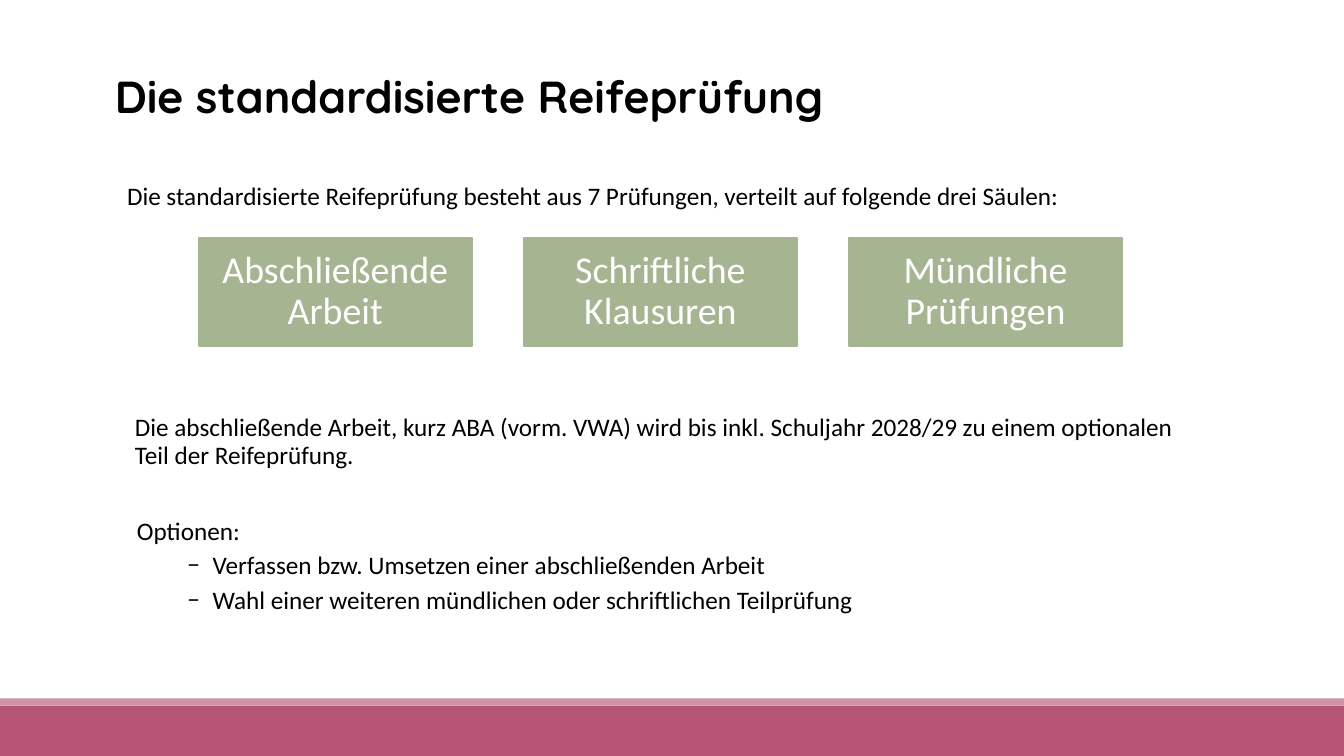
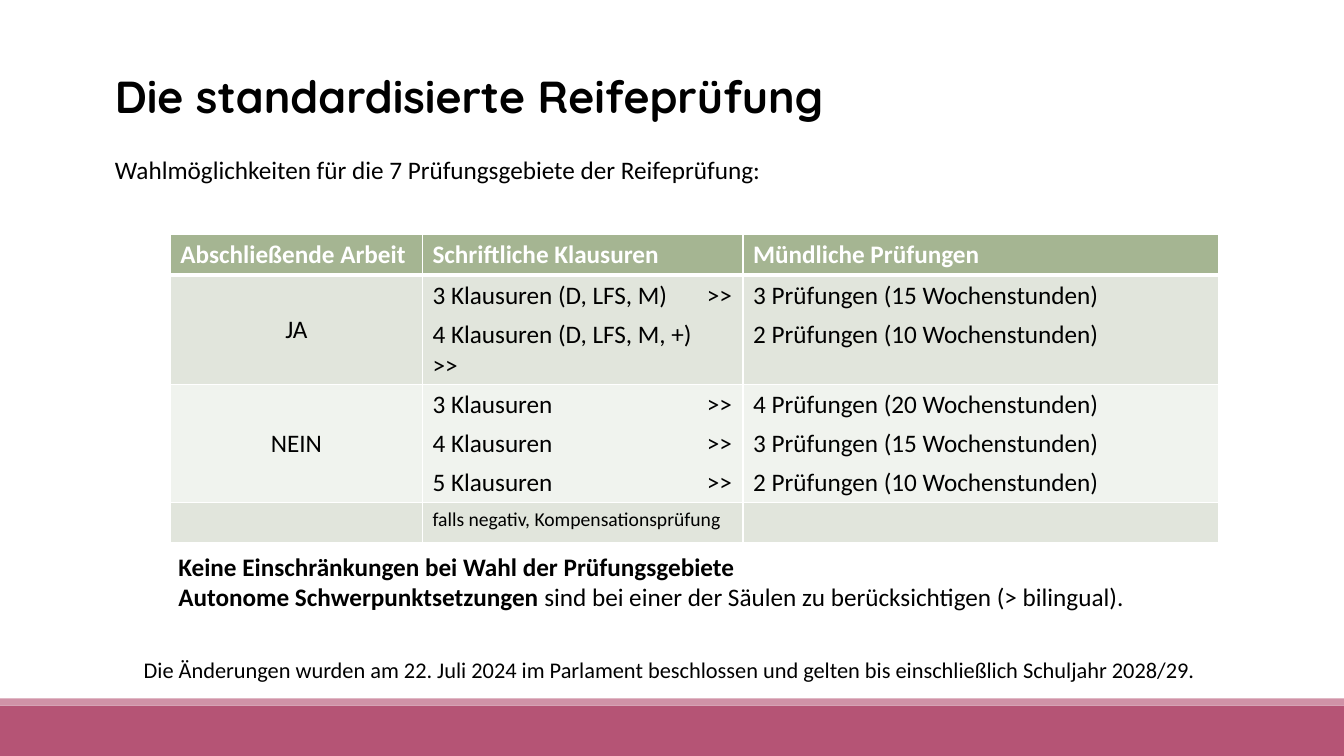
"""Build two slides on the standardised school-leaving examination."""
from lxml import etree
from pptx import Presentation
from pptx.dml.color import RGBColor
from pptx.enum import shapes, text
from pptx.oxml import ns
from pptx.util import Inches, Pt

BLACK = RGBColor(0x00, 0x00, 0x00)
WHITE = RGBColor(0xFF, 0xFF, 0xFF)
GREEN = RGBColor(0xA5, 0xB5, 0x92)
GREEN_TINT = RGBColor(0xE1, 0xE5, 0xDC)
GREEN_PALE = RGBColor(0xF0, 0xF3, 0xEE)
BERRY = RGBColor(0xB5, 0x54, 0x75)
ROSE = RGBColor(0xD0, 0x92, 0xA7)
BODY_FONT = "Calibri"
TITLE_FONT = "Quicksand"
TITLE = "Die standardisierte Reifeprüfung"
PILLARS = ("Abschließende Arbeit", "Schriftliche Klausuren", "Mündliche Prüfungen")
CENTER = text.PP_ALIGN.CENTER
MIDDLE = text.MSO_ANCHOR.MIDDLE


def format_runs(p, size=18, color=BLACK, bold=False, font=BODY_FONT):
    for r in p.runs:
        r.font.name = font
        r.font.size = Pt(size)
        r.font.bold = bold
        r.font.color.rgb = color


def add_text(s, left, top, width, height, content, spacing=None, align=None, **style):
    tf = s.shapes.add_textbox(Inches(left), Inches(top), Inches(width),
                              Inches(height)).text_frame
    tf.word_wrap = True
    tf.text = content
    for p in tf.paragraphs:
        p.line_spacing = spacing
        p.alignment = align
        format_runs(p, **style)
    return tf


def add_rect(s, left, top, width, height, color):
    sp = s.shapes.add_shape(shapes.MSO_SHAPE.RECTANGLE, Inches(left), Inches(top),
                            Inches(width), Inches(height))
    sp.shadow.inherit = False
    sp.fill.solid()
    sp.fill.fore_color.rgb = color
    sp.line.fill.background()
    return sp


def add_slide(prs):
    s = prs.slides.add_slide(prs.slide_layouts[6])
    add_rect(s, 0, 7, 13.33, 0.5, BERRY)
    add_rect(s, 0, 6.93, 13.33, 0.07, ROSE)
    add_text(s, 1.04, 0.69, 11.5, 0.67, TITLE, spacing=0.9,
             size=32, bold=True, font=TITLE_FONT)
    return s


def add_pillars(s, first=1.97, last=8.42):
    pitch = (last - first) / (len(PILLARS) - 1)
    for i, label in enumerate(PILLARS):
        sp = add_rect(s, first + i * pitch, 2.36, 2.71, 1.07, GREEN)
        sp.line.color.rgb = GREEN
        sp.line.width = Pt(1.25)
        tf = sp.text_frame
        tf.word_wrap = True
        tf.vertical_anchor = MIDDLE
        tf.margin_left = tf.margin_right = Inches(0.21)
        tf.margin_top = tf.margin_bottom = Inches(0.12)
        tf.text = label
        p = tf.paragraphs[0]
        p.alignment = CENTER
        p.line_spacing = 0.9
        format_runs(p, size=27, color=WHITE)


def make_bullet(p, char="−"):
    pPr = p._p.get_or_add_pPr()
    pPr.set("marL", str(Inches(0.75)))
    pPr.set("indent", str(Inches(-0.25)))
    etree.SubElement(pPr, ns.qn("a:buFont")).set("typeface", BODY_FONT)
    etree.SubElement(pPr, ns.qn("a:buChar")).set("char", char)


def add_right_tab(p, pos):
    tabs = etree.SubElement(p._p.get_or_add_pPr(), ns.qn("a:tabLst"))
    tab = etree.SubElement(tabs, ns.qn("a:tab"))
    tab.set("pos", str(Inches(pos)))
    tab.set("algn", "r")


def set_borders(cell, bottom):
    tcPr = cell._tc.get_or_add_tcPr()
    for i, (side, width) in enumerate((("L", 1), ("R", 1), ("T", 1), ("B", bottom))):
        ln = etree.Element(ns.qn(f"a:ln{side}"), w=str(Pt(width)))
        fill = etree.SubElement(ln, ns.qn("a:solidFill"))
        etree.SubElement(fill, ns.qn("a:srgbClr")).set("val", str(WHITE))
        tcPr.insert(i, ln)


def fill_cell(cell, content, fill, border=1, align=None, middle=False,
              space_after=6, **style):
    cell.fill.solid()
    cell.fill.fore_color.rgb = fill
    set_borders(cell, border)
    if middle:
        cell.vertical_anchor = MIDDLE
    cell.text = content
    for p in cell.text_frame.paragraphs:
        p.space_after = Pt(space_after)
        p.alignment = align
        if "\t" in p.text:
            add_right_tab(p, 2.97)
        format_runs(p, **style)


def add_grid(s, left, top, widths, heights):
    table = s.shapes.add_table(len(heights), len(widths), Inches(left), Inches(top),
                               Inches(sum(widths)), Inches(sum(heights))).table
    for column, width in zip(table.columns, widths):
        column.width = Inches(width)
    for row, height in zip(table.rows, heights):
        row.height = Inches(height)
    return table


def add_intro(s, left, top, content):
    table = add_grid(s, left, top, (10.78,), (0.4,))
    table.first_row = table.horz_banding = False
    fill_cell(table.cell(0, 0), content, WHITE, middle=True, space_after=0)


def add_options_table(s, rows):
    table = add_grid(s, 1.69, 2.33, (2.5, 3.18, 4.72), (0.4, 1.08, 1.17, 0.4))
    for j, label in enumerate(PILLARS):
        fill_cell(table.cell(0, j), label, GREEN, border=3, space_after=0,
                  color=WHITE, bold=True)
    for i, (size, *row) in enumerate(rows, 1):
        for j, content in enumerate(row):
            fill_cell(table.cell(i, j), content, GREEN_TINT if i % 2 else GREEN_PALE,
                      align=None if j else CENTER, middle=j == 0, size=size)


def build_pillars_slide(prs):
    s = add_slide(prs)
    add_intro(s, 1.16, 1.75, "Die standardisierte Reifeprüfung besteht aus 7 Prüfungen, "
              "verteilt auf folgende drei Säulen:")
    add_pillars(s)
    add_text(s, 1.24, 4.07, 10.7, 0.64,
             "Die abschließende Arbeit, kurz ABA (vorm. VWA) wird bis inkl. Schuljahr "
             "2028/29 zu einem optionalen Teil der Reifeprüfung.", spacing=0.9)
    tf = add_text(s, 1.26, 5.1, 11.05, 1.06,
                  "Optionen:\nVerfassen bzw. Umsetzen einer abschließenden Arbeit\n"
                  "Wahl einer weiteren mündlichen oder schriftlichen Teilprüfung",
                  spacing=0.9)
    for p in tf.paragraphs[1:]:
        p.level = 1
        p.space_before = Pt(5)
        make_bullet(p)


def build_options_slide(prs):
    s = add_slide(prs)
    two, three, four = (f"{n} Prüfungen ({5 * n} Wochenstunden)" for n in (2, 3, 4))
    add_options_table(s, (
        (18, "JA", "3 Klausuren (D, LFS, M)\t>>\n4 Klausuren (D, LFS, M, +)\v>>",
         f"{three}\n{two}"),
        (18, "NEIN", "\n".join(f"{n} Klausuren\t>>" for n in (3, 4, 5)),
         f"{four}\n{three}\n{two}"),
        (14, "", "falls negativ, Kompensationsprüfung", "")))
    add_intro(s, 1.04, 1.49,
              "Wahlmöglichkeiten für die 7 Prüfungsgebiete der Reifeprüfung:")
    tf = add_text(s, 1.67, 5.42, 9.95, 0.71,
                  "Keine Einschränkungen bei Wahl der Prüfungsgebiete\n"
                  "Autonome Schwerpunktsetzungen ", bold=True)
    p = tf.paragraphs[1]
    p.add_run().text = "sind bei einer der Säulen zu berücksichtigen (> bilingual)."
    format_runs(p)
    p.runs[0].font.bold = True
    add_text(s, 1.04, 6.46, 11.2, 0.4,
             "Die Änderungen wurden am 22. Juli 2024 im Parlament beschlossen und gelten "
             "bis einschließlich Schuljahr 2028/29.", align=CENTER, size=16)


def main():
    prs = Presentation()
    prs.slide_width = Inches(13.33)
    prs.slide_height = Inches(7.5)
    build_pillars_slide(prs)
    build_options_slide(prs)
    prs.save("out.pptx")


if __name__ == "__main__":
    main()
